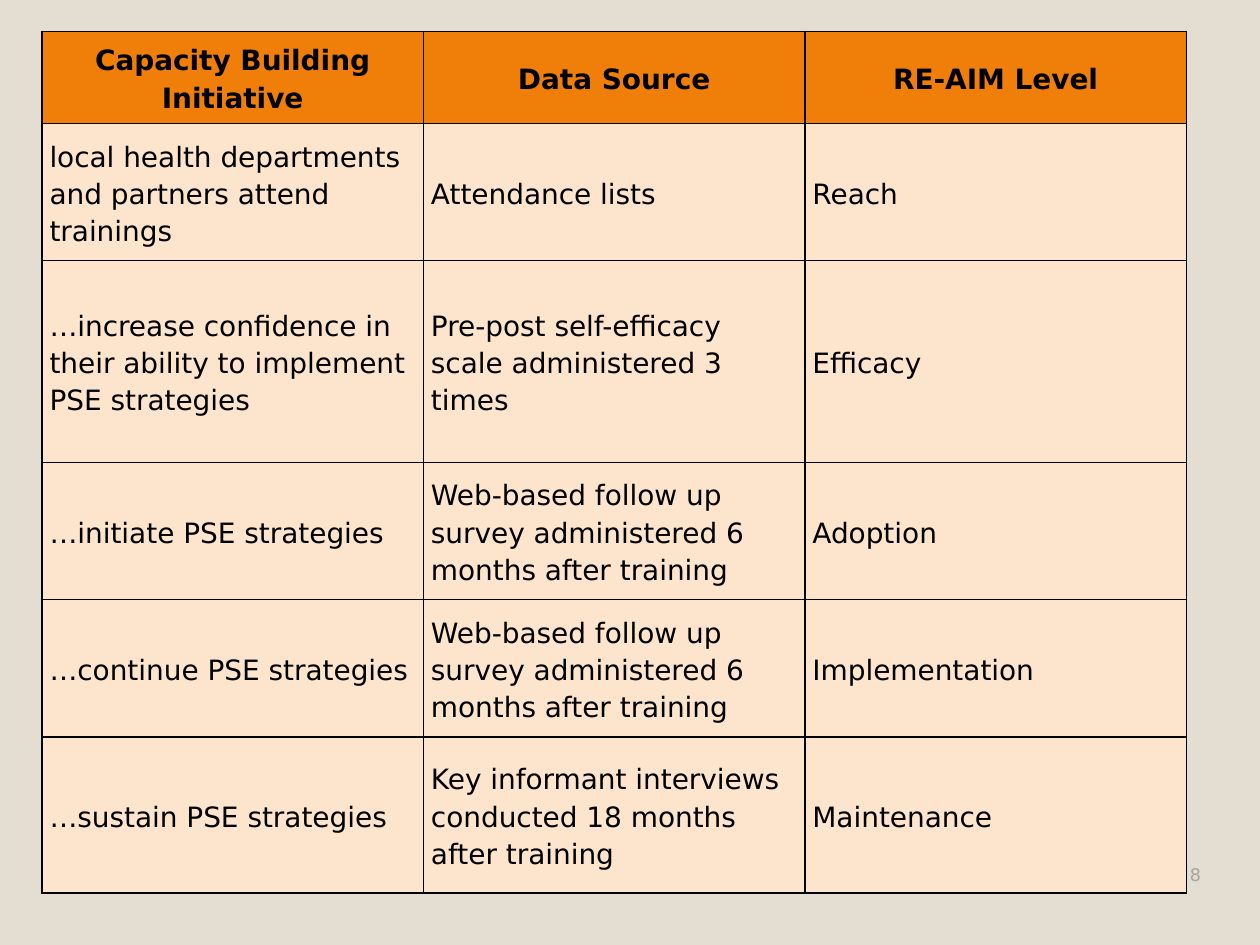
from lxml.etree import SubElement
from pptx import Presentation
from pptx.dml.color import RGBColor
from pptx.enum.text import MSO_ANCHOR as Anchor, PP_ALIGN as Align
from pptx.oxml.ns import qn
from pptx.util import Inches, Pt

WIDTH, HEIGHT = Inches(10), Inches(7.5)
SAND = RGBColor(0xE3, 0xDE, 0xD1)
ORANGE = RGBColor(0xF0, 0x7F, 0x09)
PEACH = RGBColor(0xFD, 0xE5, 0xCD)
BLACK = RGBColor(0x00, 0x00, 0x00)
GRAY = RGBColor(0xA8, 0xA4, 0x9B)

FOLLOW_UP = "Web-based follow up survey administered 6 months after training"
ROWS = [
    ("Capacity Building Initiative", "Data Source", "RE-AIM Level"),
    ("local health departments and partners attend trainings",
     "Attendance lists", "Reach"),
    ("…increase confidence in their ability to implement PSE strategies",
     "Pre-post self-efficacy scale administered 3 times", "Efficacy"),
    ("…initiate PSE strategies", FOLLOW_UP, "Adoption"),
    ("…continue PSE strategies", FOLLOW_UP, "Implementation"),
    ("…sustain PSE strategies",
     "Key informant interviews conducted 18 months after training", "Maintenance"),
]
ROW_HEIGHTS = [0.73, 1.09, 1.6, 1.09, 1.09, 1.24]  # inches


def apply(target, values):
    for name, value in values.items():
        setattr(target, name, value)


class SlideBuilder:
    font_name = "DejaVu Sans"
    cell_format = dict(vertical_anchor=Anchor.MIDDLE, margin_left=Inches(0.06),
                       margin_right=Inches(0.06), margin_top=0, margin_bottom=0)

    def __init__(self, slide):
        self.slide = slide

    def background(self, color):
        fill = self.slide.background.fill
        fill.solid()
        fill.fore_color.rgb = color

    def place(self, left, top, width, height):
        """Turn percentages of the slide's size into lengths."""
        return (round(left * WIDTH / 100), round(top * HEIGHT / 100),
                round(width * WIDTH / 100), round(height * HEIGHT / 100))

    def add_text(self, frame, text, size, color, bold=False, **paragraph_format):
        paragraph = frame.paragraphs[0]
        apply(paragraph, paragraph_format)
        run = paragraph.add_run()
        run.text = text
        apply(run.font, dict(name=self.font_name, size=Pt(size), bold=bold))
        run.font.color.rgb = color

    def borders(self, cell, color, points):
        properties = cell._tc.get_or_add_tcPr()
        for side in ("lnL", "lnR", "lnT", "lnB"):
            line = SubElement(properties, qn(f"a:{side}"), w=str(Pt(points)))
            fill = SubElement(line, qn("a:solidFill"))
            SubElement(fill, qn("a:srgbClr"), val=str(color))

    def table(self, rows, heights, area):
        shape = self.slide.shapes.add_table(len(rows), len(rows[0]), *self.place(*area))
        table = shape.table
        for row, height in zip(table.rows, heights):
            row.height = Inches(height)
        for row_index, texts in enumerate(rows):
            header = row_index == 0
            for column_index, text in enumerate(texts):
                cell = table.cell(row_index, column_index)
                apply(cell, self.cell_format)
                self.borders(cell, BLACK, 1)
                cell.fill.solid()
                cell.fill.fore_color.rgb = ORANGE if header else PEACH
                self.add_text(cell.text_frame, text, 16, BLACK, bold=header,
                              alignment=Align.CENTER if header else Align.LEFT,
                              line_spacing=1.15)

    def page_number(self, text, area):
        frame = self.slide.shapes.add_textbox(*self.place(*area)).text_frame
        apply(frame, dict(word_wrap=True, vertical_anchor=Anchor.BOTTOM))
        self.add_text(frame, text, 10, GRAY, alignment=Align.RIGHT)


def main():
    presentation = Presentation()
    apply(presentation, dict(slide_width=WIDTH, slide_height=HEIGHT))
    blank_layout = presentation.slide_layouts[6]
    builder = SlideBuilder(presentation.slides.add_slide(blank_layout))

    # Background
    builder.background(SAND)
    # Evaluation table
    builder.table(ROWS, ROW_HEIGHTS, (3.33, 3.33, 90.83, 91))
    # Page number
    builder.page_number("8", (91.3, 89, 5, 5.3))

    presentation.save("out.pptx")


if __name__ == "__main__":
    main()
